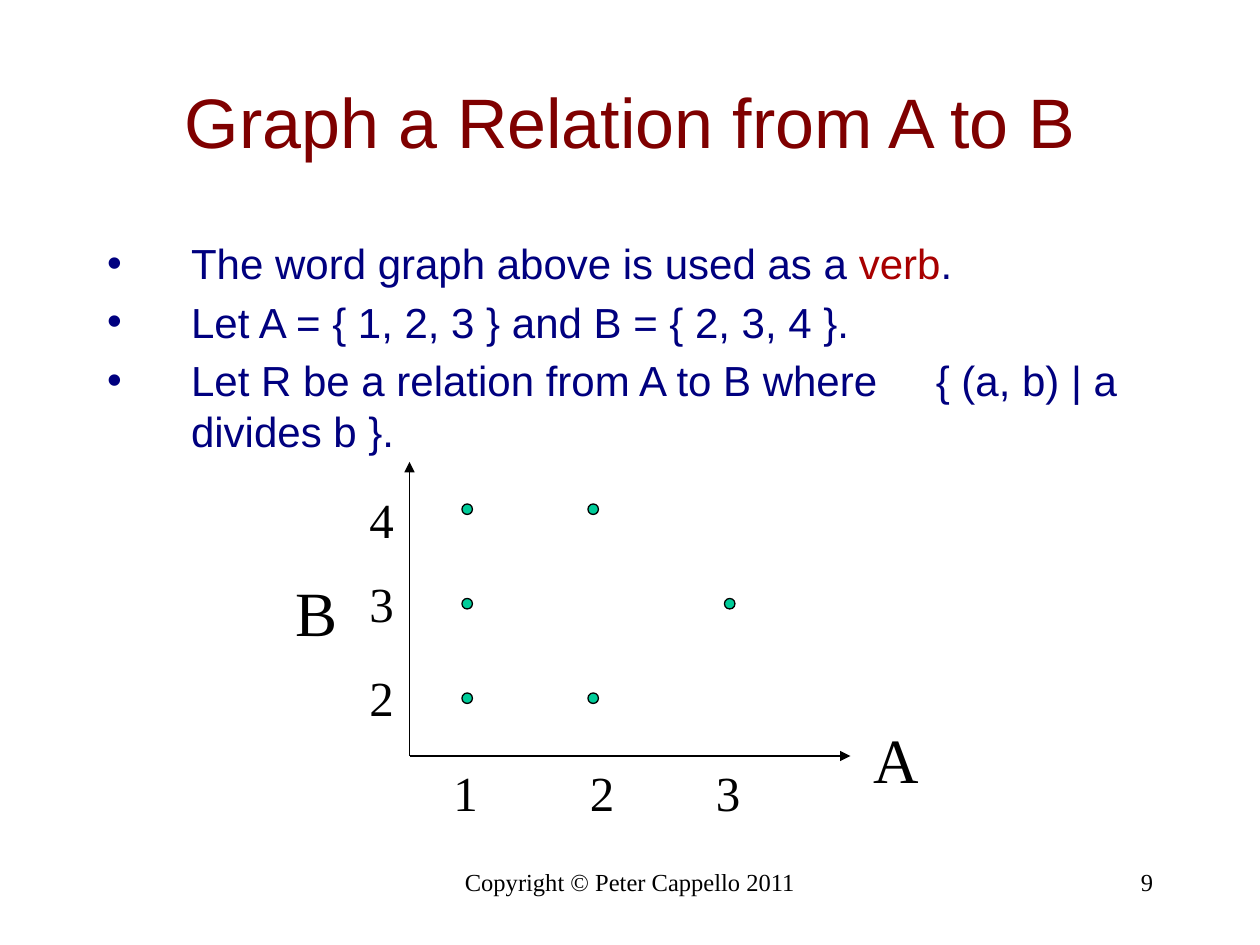
import pptx
import pptx.util
import pptx.dml.color
import pptx.enum.shapes
import pptx.enum.text
import pptx.oxml.ns
import lxml.etree

Pt = pptx.util.Pt
ALIGN = pptx.enum.text.PP_ALIGN
ANCHOR = pptx.enum.text.MSO_ANCHOR
AUTO = pptx.enum.text.MSO_AUTO_SIZE
SHAPE = pptx.enum.shapes.MSO_SHAPE
LINE = pptx.enum.shapes.MSO_CONNECTOR
qn = pptx.oxml.ns.qn


def rgb(value):
    return pptx.dml.color.RGBColor.from_string(value)


def add_run(p, text, size, font, color):
    r = p.add_run()
    r.text = text
    r.font.size = Pt(size)
    r.font.name = font
    r.font.color.rgb = rgb(color)
    return r


prs = pptx.Presentation()
prs.slide_width, prs.slide_height = Pt(720), Pt(540)
s = prs.slides.add_slide(prs.slide_layouts[1])
title, body = s.shapes.title, s.placeholders[1]

title.left, title.top, title.width, title.height = Pt(54), Pt(24), Pt(612), Pt(90)
tf = title.text_frame
tf.auto_size = AUTO.NONE
tf.vertical_anchor = ANCHOR.MIDDLE
p = tf.paragraphs[0]
p.alignment = ALIGN.CENTER
add_run(p, "Graph a Relation from A to B", 40, "Arial", "7F0000")

body.left, body.top, body.width, body.height = Pt(54), Pt(132), Pt(642), Pt(348)
tf = body.text_frame
tf.auto_size = AUTO.NONE
items = [
    [("The word graph above is used as a ", "00007F", 0), ("verb", "A80000", 0), (".", "00007F", 0)],
    [("Let A = { 1, 2, 3 } and B = { 2, 3, 4 }.", "00007F", 0)],
    [("Let R be a relation from A to B where", "00007F", 0), (" ", "00007F", 26.7),
     ("{ (a, b) | a divides b }.", "00007F", 0)],
]
for i, runs in enumerate(items):
    p = tf.paragraphs[0] if i == 0 else tf.add_paragraph()
    pPr = p._p.get_or_add_pPr()
    pPr.set("marL", str(Pt(48)))
    pPr.set("indent", str(-Pt(48)))
    lxml.etree.SubElement(pPr, qn("a:buChar")).set("char", "•")
    for text, color, spacing in runs:
        r = add_run(p, text, 24, "Arial", color)
        if spacing:
            r.font._element.set("spc", str(round(spacing * 100)))

for text, left, width, align in [
    ("Copyright © Peter Cappello 2011", 246, 228, ALIGN.CENTER),
    ("9", 516, 150, ALIGN.RIGHT),
]:
    sp = s.shapes.add_textbox(Pt(left), Pt(492), Pt(width), Pt(36))
    tf = sp.text_frame
    tf.word_wrap = True
    p = tf.paragraphs[0]
    p.alignment = align
    add_run(p, text, 14, "Times New Roman", "000000")

for x, y in [(486, 432), (234, 264)]:
    axis = s.shapes.add_connector(LINE.STRAIGHT, Pt(234), Pt(432), Pt(x), Pt(y))
    axis.line.color.rgb = rgb("000000")
    axis.line.width = Pt(0.75)
    lxml.etree.SubElement(axis.line._get_or_add_ln(), qn("a:tailEnd")).set("type", "triangle")
    lxml.etree.SubElement(axis._element.spPr, qn("a:effectLst"))

labels = [(text, x, 432, 28.8, 41, 28) for text, x in [("1", 252), ("2", 330), ("3", 402)]]
labels += [(text, 204, y, 28.8, 41, 28) for text, y in [("2", 378), ("3", 324), ("4", 276)]]
labels += [("A", 492, 408, 40.3, 50.4, 36), ("B", 162, 324, 38.2, 50.4, 36)]
for text, left, top, width, height, size in labels:
    sp = s.shapes.add_textbox(Pt(left), Pt(top), Pt(width), Pt(height))
    tf = sp.text_frame
    tf.word_wrap = False
    tf.auto_size = AUTO.SHAPE_TO_FIT_TEXT
    add_run(tf.paragraphs[0], text, size, "Times New Roman", "000000")

columns = {1: 264, 2: 336, 3: 414}
for a, left in columns.items():
    for b in (2, 3, 4):
        if b % a == 0:
            dot = s.shapes.add_shape(SHAPE.OVAL, Pt(left), Pt(396 - 54 * (b - 2)), Pt(6), Pt(6))
            dot.shadow.inherit = False
            dot.fill.solid()
            dot.fill.fore_color.rgb = rgb("00CC99")
            dot.line.color.rgb = rgb("000000")
            dot.line.width = Pt(0.75)

prs.save("out.pptx")
